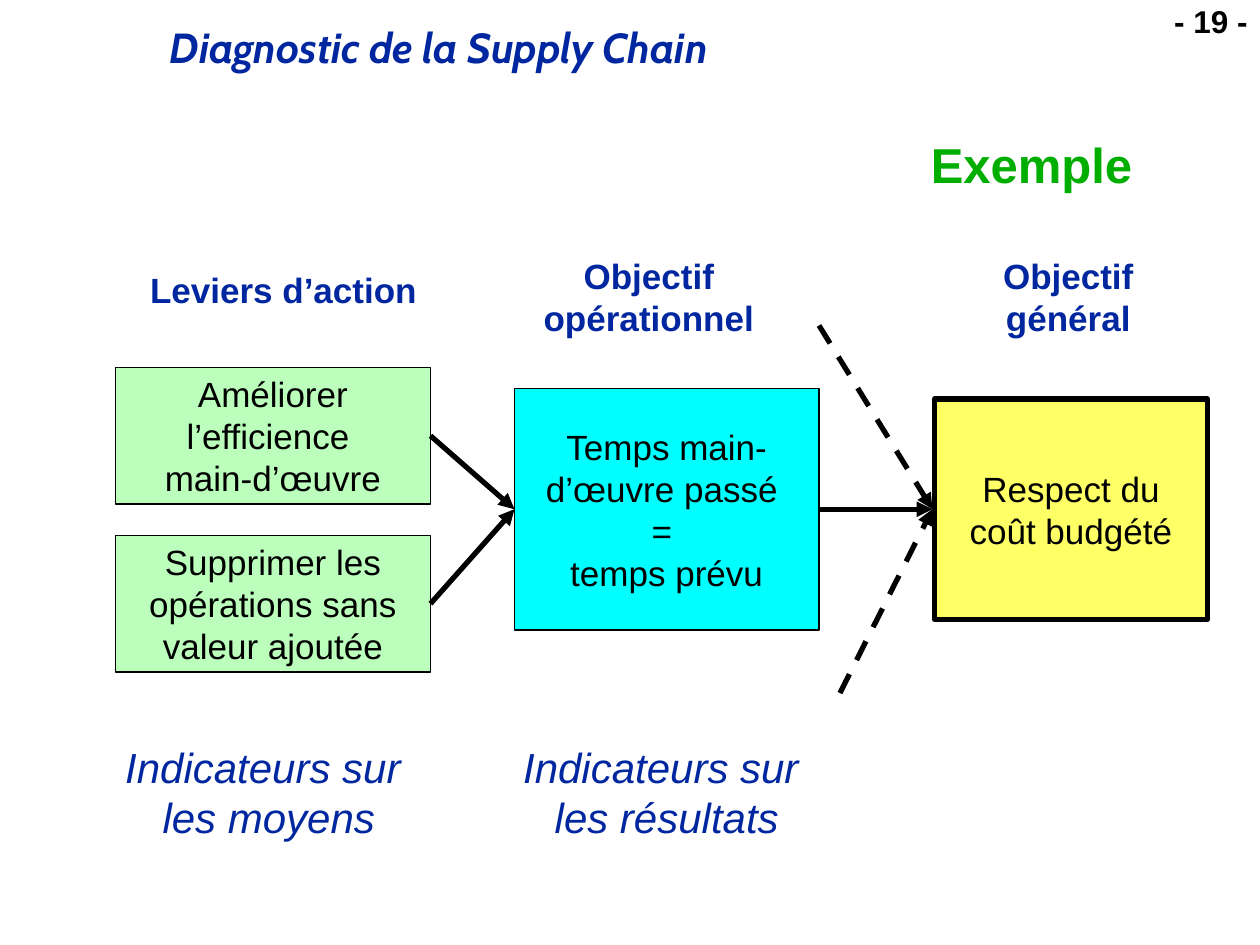
from lxml.etree import SubElement
from pptx import Presentation
from pptx.dml.color import RGBColor
from pptx.enum.dml import MSO_LINE_DASH_STYLE as DASH
from pptx.enum.shapes import MSO_CONNECTOR, MSO_SHAPE
from pptx.enum.text import MSO_ANCHOR as ANCHOR, PP_ALIGN as ALIGN
from pptx.oxml.ns import qn
from pptx.util import Inches, Pt

BLACK = RGBColor(0x00, 0x00, 0x00)
NAVY = RGBColor(0x00, 0x27, 0x9F)
GREEN = RGBColor(0x00, 0xAE, 0x00)
MINT = RGBColor(0xBC, 0xFF, 0xBC)
CYAN = RGBColor(0x00, 0xFF, 0xFF)
YELLOW = RGBColor(0xFF, 0xFF, 0x66)

COLUMNS, ROWS = 120, 90
CELL = Inches(10) / COLUMNS

deck = Presentation()
deck.slide_width = round(COLUMNS * CELL)
deck.slide_height = round(ROWS * CELL)
page = deck.slides.add_slide(deck.slide_layouts[6])


def grid(*cells):
    """Turn grid columns and rows into lengths."""
    return [round(cell * CELL) for cell in cells]


def write(box, *texts, size=20, color=BLACK, font="Arial", bold=False, italic=False,
          align=ALIGN.CENTER, anchor=ANCHOR.TOP, spacing=None, wrap=True):
    """Fill a box with one paragraph per text; a newline is a line break."""
    frame = box.text_frame
    frame.word_wrap = wrap
    frame.vertical_anchor = anchor
    for index, text in enumerate(texts):
        para = frame.add_paragraph() if index else frame.paragraphs[0]
        para.text = text
        para.alignment = align
        para.line_spacing = spacing
        for span in para.runs:
            span.font.name = font
            span.font.size = Pt(size)
            span.font.bold = bold
            span.font.italic = italic
            span.font.color.rgb = color


# Header
write(page.shapes.add_textbox(*grid(15, 2, 97, 5.5)), "Diagnostic de la Supply Chain",
      size=24, color=NAVY, font="Cabin", bold=True, italic=True, align=ALIGN.LEFT, spacing=0.9)
write(page.shapes.add_textbox(*grid(109, 0, 11, 4.4)), "- 19 -",
      size=18, bold=True, align=ALIGN.RIGHT, spacing=0.9)
write(page.shapes.add_textbox(*grid(14, 13, 95, 6)), "Exemple",
      size=28, color=GREEN, bold=True, align=ALIGN.RIGHT, anchor=ANCHOR.MIDDLE, spacing=0.9)

# Column headings
for area, heading in [
    ((13, 25, 28, 5.3), "Leviers d’action"),
    ((50.5, 23.6, 22.6, 9.2), "Objectif\nopérationnel"),
    ((94.3, 23.6, 14.9, 9.2), "Objectif\ngénéral"),
]:
    write(page.shapes.add_textbox(*grid(*area)), heading, color=NAVY, bold=True, wrap=False)

# Levers and objectives
for area, fill, border, text in [
    ((11, 35, 30, 13), MINT, 0.75, "Améliorer l’efficience \nmain-d’œuvre"),
    ((11, 51, 30, 13), MINT, 0.75, "Supprimer les opérations sans valeur ajoutée"),
    ((49, 37, 29, 23), CYAN, 0.75, "Temps main-d’œuvre passé \n= \ntemps prévu"),
    ((89, 38, 26, 21), YELLOW, 3, "Respect du coût budgété"),
]:
    box = page.shapes.add_shape(MSO_SHAPE.RECTANGLE, *grid(*area))
    box.shadow.inherit = False
    box.fill.solid()
    box.fill.fore_color.rgb = fill
    box.line.color.rgb = BLACK
    box.line.width = Pt(border)
    write(box, text, anchor=ANCHOR.MIDDLE)

# Arrows towards the operational and the general objective
OPERATIONAL, GENERAL = (49, 48.5), (88.8, 48.5)
for start, end, dash in [
    ((41, 57.5), OPERATIONAL, None),
    ((41, 41.5), OPERATIONAL, None),
    ((78, 48.5), GENERAL, None),
    ((80, 66), GENERAL, DASH.DASH),
    ((78, 31), GENERAL, DASH.DASH),
]:
    arrow = page.shapes.add_connector(MSO_CONNECTOR.STRAIGHT, *grid(*start, *end))
    arrow.line.color.rgb = BLACK
    arrow.line.width = Pt(3)
    arrow.line.dash_style = dash
    SubElement(arrow.line._get_or_add_ln(), qn("a:tailEnd"), type="triangle")
    SubElement(arrow._element.spPr, qn("a:effectLst"))

# Indicators
for left, subject in [(10.7, "les moyens"), (48.6, "les résultats")]:
    write(page.shapes.add_textbox(*grid(left, 70, 29.8, 10.8)), "Indicateurs sur ", subject,
          size=24, color=NAVY, italic=True, wrap=False)

deck.save("out.pptx")
